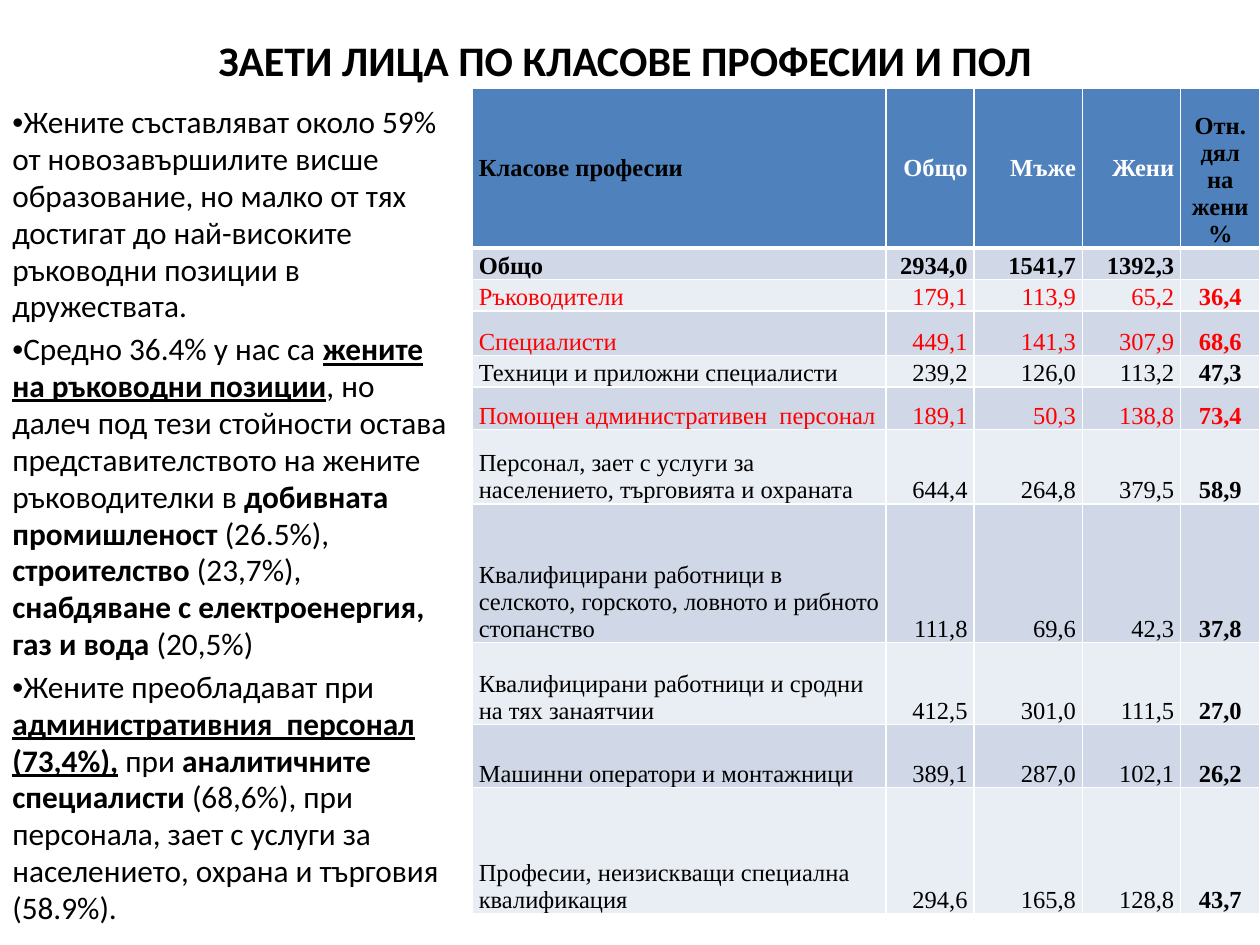
from lxml import etree
from pptx import Presentation
from pptx.dml.color import RGBColor
from pptx.enum.text import MSO_ANCHOR, PP_ALIGN
from pptx.oxml.ns import qn
from pptx.util import Inches, Pt

LEFT, MID, RIGHT = PP_ALIGN.LEFT, PP_ALIGN.CENTER, PP_ALIGN.RIGHT
CENTRE, BOTTOM = MSO_ANCHOR.MIDDLE, MSO_ANCHOR.BOTTOM
INK = {"black": "000000", "white": "FFFFFF", "red": "FF0000",
       "head": "4F81BD", "dark": "D0D8E8", "light": "E9EDF4"}


def style(run, font, size, ink="black", bold=False):
    run.font.name = font
    run.font.size = Pt(size)
    run.font.bold = bold
    run.font.color.rgb = RGBColor.from_string(INK[ink])


def edge(cell, side, width):
    """Draw a white border on one side of a cell."""
    line = etree.SubElement(cell._tc.get_or_add_tcPr(), qn(f"a:ln{side}"), w=str(Pt(width)))
    fill = etree.SubElement(line, qn("a:solidFill"))
    etree.SubElement(fill, qn("a:srgbClr"), val=INK["white"])


deck = Presentation()
deck.slide_width, deck.slide_height = Inches(10), Inches(7.5)
slide = deck.slides.add_slide(deck.slide_layouts[5])

# Title
title = slide.shapes.title
title.left, title.top = Inches(0.5), Inches(0)
title.width, title.height = Inches(9), Inches(0.94)
frame = title.text_frame
frame.text = "ЗАЕТИ ЛИЦА ПО КЛАСОВЕ ПРОФЕСИИ И ПОЛ "
frame.vertical_anchor = CENTRE
frame.paragraphs[0].alignment = MID
style(frame.paragraphs[0].runs[0], "Calibri", 24, bold=True)

# Findings: "b" is bold, "u" is bold and underlined
notes = [
    [("Жените съставляват около 59% от новозавършилите висше образование, но малко "
      "от тях достигат до най-високите ръководни позиции в дружествата.", "")],
    [("Средно 36.4% у нас са ", ""), ("жените на ръководни позиции", "u"),
     (", но далеч под тези стойности остава представителството на жените "
      "ръководителки в ", ""),
     ("добивната промишленост ", "b"), ("(26.5%), ", ""),
     ("строителство", "b"), (" (23,7%), ", ""),
     ("снабдяване с електроенергия, газ и вода ", "b"), ("(20,5%)", "")],
    [("Жените преобладават при ", ""),
     ("административния  персонал (73,4%),", "u"), (" при", ""),
     (" аналитичните специалисти ", "b"),
     ("(68,6%), при персонала, зает с услуги за населението, охрана и търговия "
      "(58.9%).", "")],
]
box = slide.shapes.add_textbox(Inches(0), Inches(0.78), Inches(3.67), Inches(6.33))
frame = box.text_frame
frame.word_wrap = True
for i, note in enumerate(notes):
    para = frame.paragraphs[0] if i == 0 else frame.add_paragraph()
    para.space_before = Pt(3.6)
    para.line_spacing = 0.98
    props = para._p.get_or_add_pPr()
    props.set("marL", "0")
    props.set("indent", "0")
    etree.SubElement(props, qn("a:buFont"), typeface="Arial")
    etree.SubElement(props, qn("a:buChar"), char="•")
    for text, mark in note:
        run = para.add_run()
        run.text = text
        style(run, "Calibri", 17.9, bold=mark != "")
        run.font.underline = mark == "u"

# Table
rows = [
    ("Класове професии", "Общо", "Мъже", "Жени", "Отн. дял на жени %"),
    ("Общо", "2934,0", "1541,7", "1392,3", ""),
    ("Ръководители", "179,1", "113,9", "65,2", "36,4"),
    ("Специалисти", "449,1", "141,3", "307,9", "68,6"),
    ("Техници и приложни специалисти", "239,2", "126,0", "113,2", "47,3"),
    ("Помощен административен  персонал", "189,1", "50,3", "138,8", "73,4"),
    ("Персонал, зает с услуги за населението, търговията и охраната",
     "644,4", "264,8", "379,5", "58,9"),
    ("Квалифицирани работници в селското, горското, ловното и рибното стопанство",
     "111,8", "69,6", "42,3", "37,8"),
    ("Квалифицирани работници и сродни на тях занаятчии",
     "412,5", "301,0", "111,5", "27,0"),
    ("Машинни оператори и монтажници", "389,1", "287,0", "102,1", "26,2"),
    ("Професии, неизискващи специална квалификация",
     "294,6", "165,8", "128,8", "43,7"),
]
widths = [3.28, 0.7, 0.86, 0.78, 0.63]
heights = [1.27, 0.25, 0.25, 0.35, 0.25, 0.34, 0.59, 1.1, 0.65, 0.5, 1]
aligns = [LEFT, RIGHT, RIGHT, RIGHT, MID]
red_rows = (2, 3, 5)

table = slide.shapes.add_table(len(rows), len(widths), Inches(3.75), Inches(0.7),
                               Inches(6.25), Inches(6.55)).table
for col, width in zip(table.columns, widths):
    col.width = Inches(width)
for r, (row, height) in enumerate(zip(rows, heights)):
    table.rows[r].height = Inches(height)
    for c, text in enumerate(row):
        cell = table.cell(r, c)
        cell.margin_left = cell.margin_right = Inches(0.05)
        cell.margin_top = cell.margin_bottom = Inches(0)
        cell.vertical_anchor = CENTRE if r == 0 and c < 4 else BOTTOM
        for side in "LRTB":
            thick = (r == 0 and side == "B") or (r == 1 and side == "T")
            edge(cell, side, 3 if thick else 1)
        cell.fill.solid()
        shade = "head" if r == 0 else "dark" if r % 2 else "light"
        cell.fill.fore_color.rgb = RGBColor.from_string(INK[shade])
        para = cell.text_frame.paragraphs[0]
        para.text = text
        para.alignment = aligns[c]
        ink = "red" if r in red_rows else "white" if r == 0 and 0 < c < 4 else "black"
        for run in para.runs:
            style(run, "Times New Roman", 14, ink, r < 2 or c == 4)
        if not text:
            etree.SubElement(para._p, qn("a:endParaRPr"), sz="1400")

deck.save("out.pptx")
